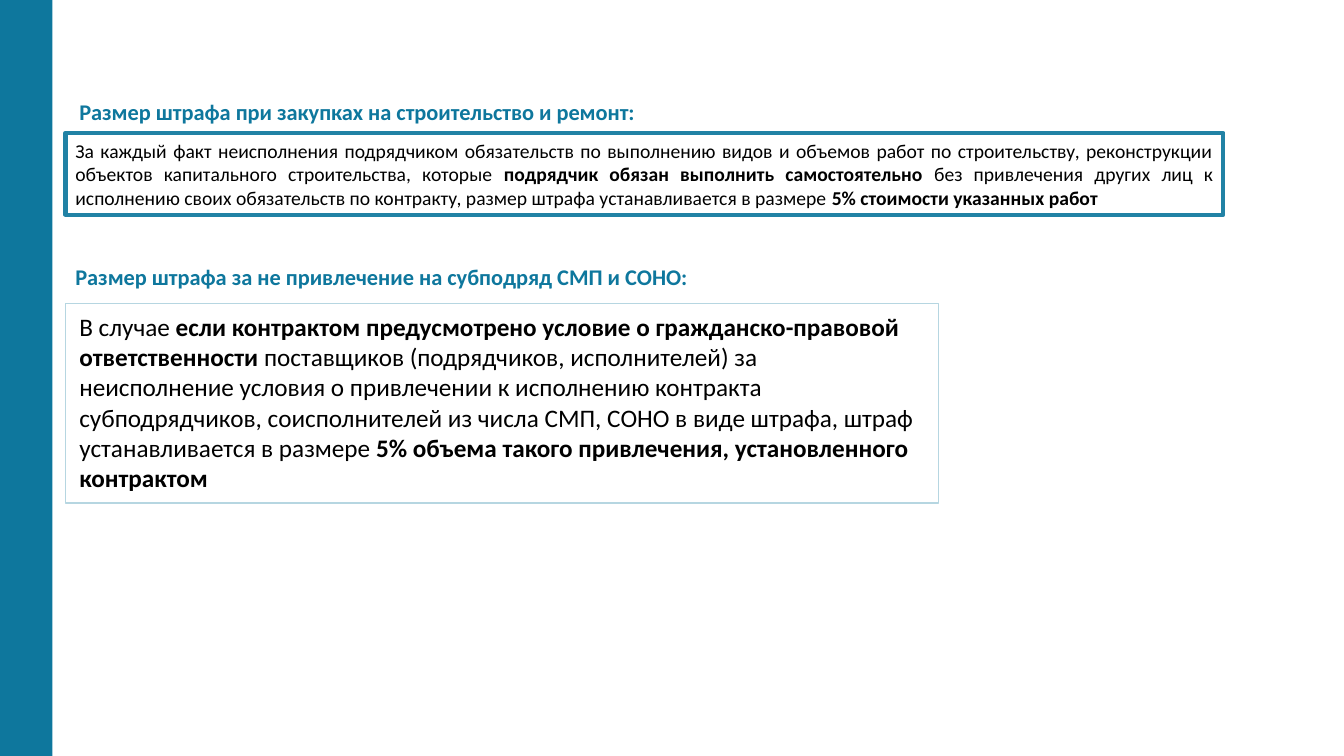
from pptx import Presentation
from pptx.dml.color import RGBColor
from pptx.enum.shapes import MSO_SHAPE
from pptx.enum.text import MSO_ANCHOR, PP_ALIGN
from pptx.util import Cm, Pt

RECTANGLE = MSO_SHAPE.RECTANGLE
TOP, MIDDLE = MSO_ANCHOR.TOP, MSO_ANCHOR.MIDDLE
LEFT, JUSTIFY = PP_ALIGN.LEFT, PP_ALIGN.JUSTIFY
TEAL, FRAME_TEAL, PALE_TEAL, BLACK = "0E779D", "2182A5", "B6D6E1", "000000"
PAGE_WIDTH, PAGE_HEIGHT = 33.87, 19.05
MARGIN = 1.65

CONSTRUCTION_RULE = [
    ("За каждый факт неисполнения подрядчиком обязательств по выполнению видов и объемов работ "
     "по строительству, реконструкции объектов капитального строительства, которые ", False),
    ("подрядчик обязан выполнить самостоятельно", True),
    (" без привлечения других лиц к исполнению своих обязательств по контракту, "
     "размер штрафа устанавливается в размере ", False),
    ("5% стоимости указанных работ", True),
]
SUBCONTRACT_RULE = [
    ("В случае ", False),
    ("если контрактом предусмотрено условие о гражданско-правовой ответственности", True),
    (" поставщиков (подрядчиков, исполнителей) за неисполнение условия о привлечении к исполнению "
     "контракта субподрядчиков, соисполнителей из числа СМП, СОНО в виде штрафа, "
     "штраф устанавливается в размере ", False),
    ("5% объема такого привлечения, установленного контрактом", True),
]


def color(value):
    return RGBColor.from_string(value)


def set_values(target, values):
    for name, value in values.items():
        setattr(target, name, value)


def add_rectangle(page, box, fill=None, line=None, line_width=1):
    shape = page.shapes.add_shape(RECTANGLE, *map(Cm, box))
    shape.shadow.inherit = False
    if fill:
        shape.fill.solid()
        shape.fill.fore_color.rgb = color(fill)
    else:
        shape.fill.background()
    if line:
        shape.line.color.rgb = color(line)
        shape.line.width = Pt(line_width)
    else:
        shape.line.fill.background()
    return shape


def write_text(shape, spans, size, ink, align=LEFT, anchor=TOP, after=0):
    set_values(shape.text_frame, {"word_wrap": True, "vertical_anchor": anchor})
    para = shape.text_frame.paragraphs[0]
    set_values(para, {"alignment": align, "space_after": Pt(after)})
    for text, bold in spans:
        span = para.add_run()
        span.text = text
        set_values(span.font, {"name": "Calibri", "size": Pt(size), "bold": bold})
        span.font.color.rgb = color(ink)


def add_heading(page, box, text):
    heading = page.shapes.add_textbox(*map(Cm, box))
    write_text(heading, [(text, True)], 16, TEAL, after=6)


def add_construction_section(page, left, top):
    add_heading(page, (left + 0.1, top, 19.66, 0.94),
                "Размер штрафа при закупках на строительство и ремонт:")
    frame = add_rectangle(page, (left, top + 0.99, 29.18, 2.06), line=FRAME_TEAL, line_width=3)
    write_text(frame, CONSTRUCTION_RULE, 14, BLACK, JUSTIFY, MIDDLE)


def add_subcontract_section(page, left, top):
    add_heading(page, (left, top, 19.66, 0.94),
                "Размер штрафа за не привлечение на субподряд СМП и СОНО:")
    add_rectangle(page, (left, top + 1.15, 22, 5.03), line=PALE_TEAL)
    rule = page.shapes.add_textbox(Cm(left + 0.1), Cm(top + 1.22), Cm(21.62), Cm(4.88))
    write_text(rule, SUBCONTRACT_RULE, 18, BLACK)


def main():
    deck = Presentation()
    set_values(deck, {"slide_width": Cm(PAGE_WIDTH), "slide_height": Cm(PAGE_HEIGHT)})
    page = deck.slides.add_slide(deck.slide_layouts[6])
    add_rectangle(page, (0, 0, 1.32, PAGE_HEIGHT), fill=TEAL)
    add_construction_section(page, MARGIN, 2.36)
    add_subcontract_section(page, MARGIN, 6.5)
    deck.save("out.pptx")


if __name__ == "__main__":
    main()
